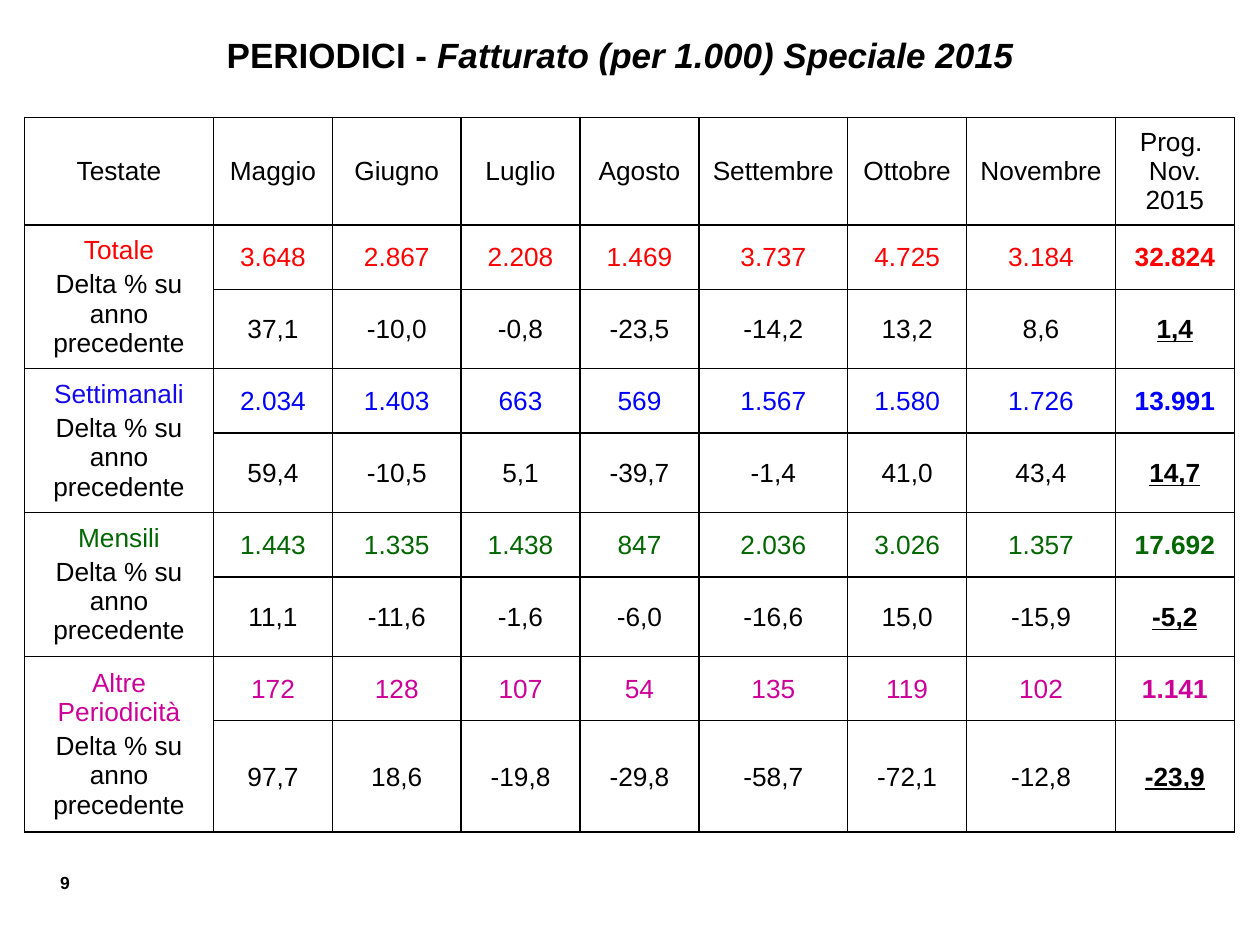
from dataclasses import dataclass

from lxml.etree import SubElement
from pptx import Presentation
from pptx.dml.color import RGBColor
from pptx.enum.text import MSO_ANCHOR, PP_ALIGN
from pptx.oxml.ns import qn
from pptx.util import Pt

COLORS = {
    "text": "000000",
    "background": "FFFFFF",
    "total": "FF0000",
    "weekly_label": "1409ED",
    "weekly": "0000FF",
    "monthly": "006600",
    "other": "CC0099",
}
FONT = "Arial"
DELTA_LABEL = "Delta % su anno precedente"
HEADERS = [
    "Testate", "Maggio", "Giugno", "Luglio", "Agosto", "Settembre",
    "Ottobre", "Novembre", "Prog. \nNov. 2015",
]
COLUMN_WIDTHS = [108, 68, 73.5, 68, 68, 85, 68, 85, 68]
ROW_HEIGHTS = [61.5] + [36.8, 45.4] * 3 + [36.8, 63.5]
WIDE_MARGINS = (7.2, 3.6, 7.2, 3.6)
TIGHT_MARGINS = (0.75, 0.75, 0.75, 0)


@dataclass
class Category:
    name: str
    label_color: str
    value_color: str
    revenue: list[str]
    delta: list[str]


CATEGORIES = [
    Category("Totale", "total", "total",
             ["3.648", "2.867", "2.208", "1.469", "3.737", "4.725", "3.184", "32.824"],
             ["37,1", "-10,0", "-0,8", "-23,5", "-14,2", "13,2", "8,6", "1,4"]),
    Category("Settimanali", "weekly_label", "weekly",
             ["2.034", "1.403", "663", "569", "1.567", "1.580", "1.726", "13.991"],
             ["59,4", "-10,5", "5,1", "-39,7", "-1,4", "41,0", "43,4", "14,7"]),
    Category("Mensili", "monthly", "monthly",
             ["1.443", "1.335", "1.438", "847", "2.036", "3.026", "1.357", "17.692"],
             ["11,1", "-11,6", "-1,6", "-6,0", "-16,6", "15,0", "-15,9", "-5,2"]),
    Category("Altre Periodicità", "other", "other",
             ["172", "128", "107", "54", "135", "119", "102", "1.141"],
             ["97,7", "18,6", "-19,8", "-29,8", "-58,7", "-72,1", "-12,8", "-23,9"]),
]


def format_paragraph(paragraph, size: float, color: str = "text", bold: bool = False,
                     underline: bool = False, alignment=PP_ALIGN.CENTER) -> None:
    paragraph.alignment = alignment
    for span in paragraph.runs:
        span.font.name = FONT
        span.font.size = Pt(size)
        span.font.bold = bold
        span.font.underline = underline
        span.font.color.rgb = RGBColor.from_string(COLORS[color])


def format_cell(cell) -> None:
    properties = cell._tc.get_or_add_tcPr()
    for side in ("lnL", "lnR", "lnT", "lnB"):
        line = SubElement(properties, qn(f"a:{side}"), w=str(Pt(1)))
        fill = SubElement(line, qn("a:solidFill"))
        SubElement(fill, qn("a:srgbClr"), val=COLORS["text"])
    cell.fill.solid()
    cell.fill.fore_color.rgb = RGBColor.from_string(COLORS["background"])
    cell.vertical_anchor = MSO_ANCHOR.MIDDLE


def write_cell(cell, text: str, margins: tuple, color: str = "text",
               bold: bool = False, underline: bool = False) -> None:
    cell.margin_left, cell.margin_top, cell.margin_right, cell.margin_bottom = map(Pt, margins)
    cell.text_frame.text = text
    for paragraph in cell.text_frame.paragraphs:
        format_paragraph(paragraph, 15, color, bold, underline)


def write_category(table, top_row: int, category: Category) -> None:
    label = table.cell(top_row, 0)
    label.merge(table.cell(top_row + 1, 0))
    write_cell(label, f"{category.name}\n{DELTA_LABEL}", WIDE_MARGINS)
    name, delta = label.text_frame.paragraphs
    format_paragraph(name, 15, category.label_color)
    delta.space_before = Pt(3)
    for column, (revenue, change) in enumerate(zip(category.revenue, category.delta), 1):
        is_total = column == len(category.revenue)
        write_cell(table.cell(top_row, column), revenue, TIGHT_MARGINS,
                   category.value_color, bold=is_total)
        write_cell(table.cell(top_row + 1, column), change, TIGHT_MARGINS,
                   bold=is_total, underline=is_total)


def add_revenue_table(page) -> None:
    frame = page.shapes.add_table(len(ROW_HEIGHTS), len(COLUMN_WIDTHS), Pt(14), Pt(67),
                                  Pt(sum(COLUMN_WIDTHS)), Pt(sum(ROW_HEIGHTS)))
    table = frame.table
    table.first_row = False
    table.horz_banding = False
    for column, width in zip(table.columns, COLUMN_WIDTHS):
        column.width = Pt(width)
    for row, height in zip(table.rows, ROW_HEIGHTS):
        row.height = Pt(height)
    for cell in table.iter_cells():
        format_cell(cell)
    for column, header in enumerate(HEADERS):
        write_cell(table.cell(0, column), header, WIDE_MARGINS if column else (3.6,) * 4)
    for index, category in enumerate(CATEGORIES):
        write_category(table, 1 + 2 * index, category)


def add_title(page) -> None:
    title = page.shapes.title
    title.left, title.top, title.width, title.height = Pt(14.5), Pt(15), Pt(680), Pt(32)
    title.text_frame.vertical_anchor = MSO_ANCHOR.MIDDLE
    paragraph = title.text_frame.paragraphs[0]
    for text in ("PERIODICI - ", "Fatturato (per 1.000) Speciale 2015"):
        paragraph.add_run().text = text
    format_paragraph(paragraph, 20, bold=True)
    paragraph.runs[1].font.italic = True


def add_page_number(page) -> None:
    box = page.shapes.add_textbox(Pt(13.5), Pt(494.5), Pt(33.5), Pt(19.5))
    box.text_frame.word_wrap = True
    box.text_frame.text = "9"
    format_paragraph(box.text_frame.paragraphs[0], 10, bold=True, alignment=PP_ALIGN.RIGHT)


def main() -> None:
    deck = Presentation()
    deck.slide_width, deck.slide_height = Pt(720), Pt(540)
    page = deck.slides.add_slide(deck.slide_layouts[5])
    add_title(page)
    add_revenue_table(page)
    add_page_number(page)
    deck.save("out.pptx")


if __name__ == "__main__":
    main()
